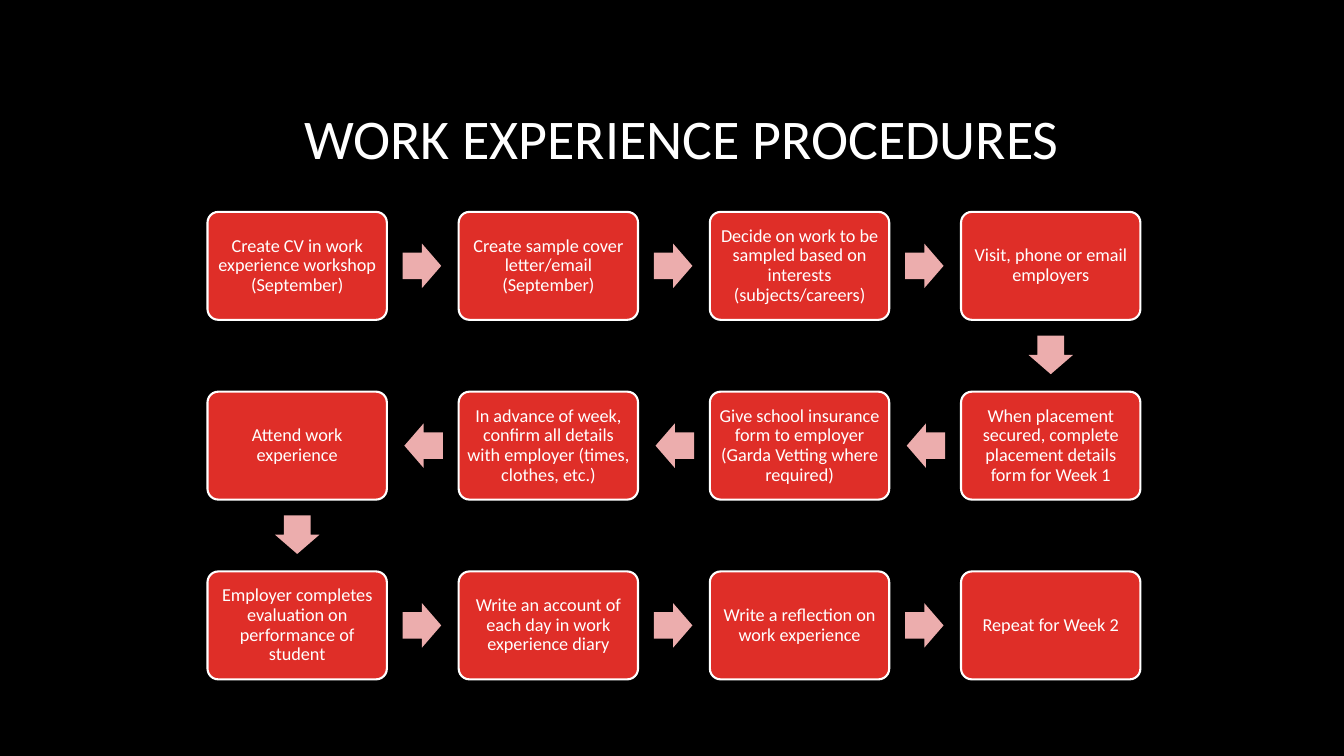
from dataclasses import dataclass

from pptx import Presentation
from pptx.dml.color import RGBColor
from pptx.enum.shapes import MSO_SHAPE as Preset
from pptx.enum.text import MSO_ANCHOR as Anchor, PP_ALIGN as Align
from pptx.util import Cm, Pt


@dataclass(frozen=True)
class Theme:
    background: RGBColor = RGBColor.from_string("000000")
    card: RGBColor = RGBColor.from_string("DF2E28")
    arrow: RGBColor = RGBColor.from_string("ECADAD")
    text: RGBColor = RGBColor.from_string("FFFFFF")
    font: str = "Calibri"
    title_size: int = 40
    step_size: int = 13
    outline: float = 1.5


THEME = Theme()
COLUMNS = 4
TITLE_BOX = (5.21, 1.78, 23.93, 3.58)
FLOW_BOX = (5.23, 5.34, 23.51, 11.78)
CARD_WIDTH, CARD_HEIGHT = 4.52, 2.72
ARROW_WIDTH, ARROW_HEIGHT = 0.97, 1.12
ARROW_SETBACK = 0.02
STEPS = [
    "Create CV in work experience workshop (September)",
    "Create sample cover letter/email (September)",
    "Decide on work to be sampled based on interests (subjects/careers)",
    "Visit, phone or email employers",
    "When placement secured, complete placement details form for Week 1",
    "Give school insurance form to employer (Garda Vetting where required)",
    "In advance of week, confirm all details with employer (times, clothes, etc.)",
    "Attend work experience",
    "Employer completes evaluation on performance of student",
    "Write an account of each day in work experience diary",
    "Write a reflection on work experience",
    "Repeat for Week 2",
]


def write(frame, text, *, size, inset=(0.25, 0.13)):
    frame.word_wrap = True
    frame.vertical_anchor = Anchor.MIDDLE
    frame.margin_left = frame.margin_right = Cm(inset[0])
    frame.margin_top = frame.margin_bottom = Cm(inset[1])
    paragraph = frame.paragraphs[0]
    paragraph.text = text
    paragraph.alignment = Align.CENTER
    paragraph.line_spacing = 0.9
    paragraph.font.name = THEME.font
    paragraph.font.size = Pt(size)
    paragraph.font.color.rgb = THEME.text


def add_centred(shapes, preset, centre, width, height, fill):
    x, y = centre
    shape = shapes.add_shape(preset, Cm(x - width / 2), Cm(y - height / 2),
                             Cm(width), Cm(height))
    shape.shadow.inherit = False
    shape.fill.solid()
    shape.fill.fore_color.rgb = fill
    return shape


def add_card(shapes, centre, step):
    card = add_centred(shapes, Preset.ROUNDED_RECTANGLE, centre,
                       CARD_WIDTH, CARD_HEIGHT, THEME.card)
    card.adjustments[0] = 0.1
    card.line.color.rgb = THEME.text
    card.line.width = Pt(THEME.outline)
    write(card.text_frame, step, size=THEME.step_size, inset=(0.13, 0.13))


def add_arrow(shapes, start, end):
    (x1, y1), (x2, y2) = start, end
    if y1 != y2:
        rotation, dx, dy = 90, 0, 1
    elif x2 > x1:
        rotation, dx, dy = 0, 1, 0
    else:
        rotation, dx, dy = 180, -1, 0
    centre = ((x1 + x2) / 2 - dx * ARROW_SETBACK,
              (y1 + y2) / 2 - dy * ARROW_SETBACK)
    arrow = add_centred(shapes, Preset.RIGHT_ARROW, centre,
                        ARROW_WIDTH, ARROW_HEIGHT, THEME.arrow)
    arrow.adjustments[0], arrow.adjustments[1] = 0.6, 0.5
    arrow.line.fill.background()
    arrow.rotation = rotation


def add_title(slide, box, title):
    heading = slide.shapes.add_textbox(*map(Cm, box))
    write(heading.text_frame, title, size=THEME.title_size)


def add_snake_flow(slide, box, steps):
    left, top, width, height = box
    rows = -(-len(steps) // COLUMNS)
    column_pitch = (width - CARD_WIDTH) / (COLUMNS - 1)
    row_pitch = (height - CARD_HEIGHT) / (rows - 1)
    flow = slide.shapes.add_group_shape().shapes
    previous = None
    for index, step in enumerate(steps):
        row, column = divmod(index, COLUMNS)
        if row % 2:
            column = COLUMNS - 1 - column
        centre = (left + CARD_WIDTH / 2 + column * column_pitch,
                  top + CARD_HEIGHT / 2 + row * row_pitch)
        if previous:
            add_arrow(flow, previous, centre)
        add_card(flow, centre, step)
        previous = centre


def main():
    deck = Presentation()
    deck.slide_width, deck.slide_height = Cm(33.87), Cm(19.05)
    slide = deck.slides.add_slide(deck.slide_layouts[6])
    slide.background.fill.solid()
    slide.background.fill.fore_color.rgb = THEME.background
    add_title(slide, TITLE_BOX, "WORK EXPERIENCE PROCEDURES")
    add_snake_flow(slide, FLOW_BOX, STEPS)
    deck.save("out.pptx")


if __name__ == "__main__":
    main()
